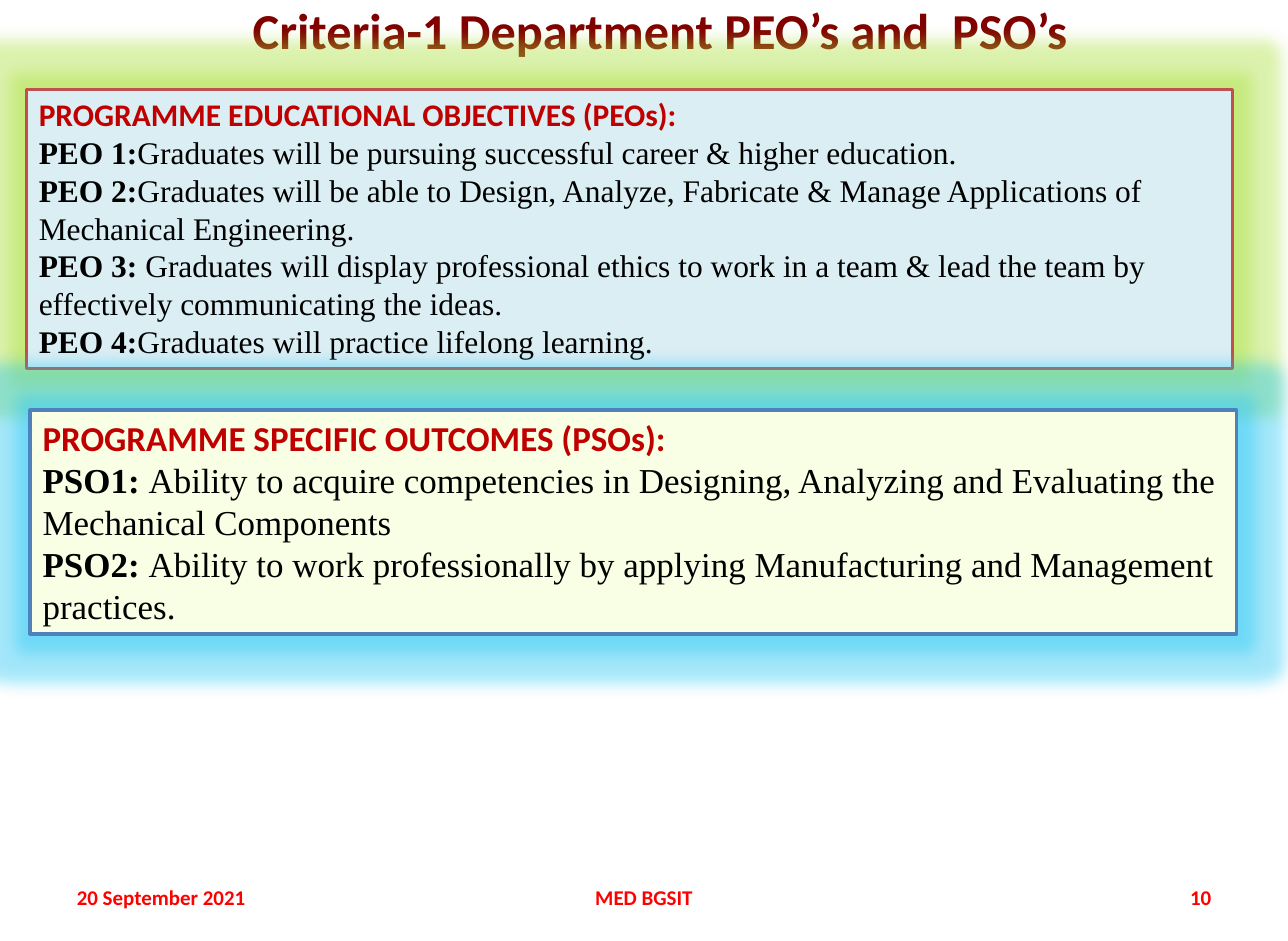
from lxml.etree import SubElement
from pptx import Presentation
from pptx.dml.color import RGBColor
from pptx.enum.shapes import MSO_SHAPE as Shape
from pptx.enum.text import MSO_ANCHOR as Anchor, MSO_AUTO_SIZE as AutoSize, PP_ALIGN as Align
from pptx.oxml.ns import qn
from pptx.util import Inches, Pt

WIDTH, HEIGHT = 10.24, 7.48
TITLE = "Criteria-1 Department PEO’s and  PSO’s"
PANELS = [
    dict(area=(0.21, 0.71, 9.59, 2.22), size=18, fill="DBEEF4", line="C0504D", glow="A7DF34",
         heading="PROGRAMME EDUCATIONAL OBJECTIVES (PEOs):",
         items=[
             ("PEO 1:", "Graduates will be pursuing successful career & higher education."),
             ("PEO 2:", "Graduates will be able to Design, Analyze, Fabricate & Manage "
                        "Applications of Mechanical Engineering."),
             ("PEO 3: ", "Graduates will display professional ethics to work in a team & "
                         "lead the team by effectively communicating the ideas."),
             ("PEO 4:", "Graduates will practice lifelong learning."),
         ]),
    dict(area=(0.24, 3.26, 9.59, 1.78), size=20, fill="F8FFE5", line="4F81BD", glow="1DC5F4",
         heading="PROGRAMME SPECIFIC OUTCOMES (PSOs):",
         items=[
             ("PSO1: ", "Ability to acquire competencies in Designing, Analyzing and "
                        "Evaluating the Mechanical Components"),
             ("PSO2: ", "Ability to work professionally by applying Manufacturing and "
                        "Management practices."),
         ]),
]
SIDE_WIDTH, CENTRE_WIDTH = 2.39, 3.24
MARGIN = WIDTH / 20
FOOTERS = [
    ("20 September 2021", MARGIN, SIDE_WIDTH, Align.LEFT),
    ("MED BGSIT", (WIDTH - CENTRE_WIDTH) / 2, CENTRE_WIDTH, Align.CENTER),
    ("10", WIDTH - MARGIN - SIDE_WIDTH, SIDE_WIDTH, Align.RIGHT),
]


def color(value):
    return RGBColor.from_string(value)


def inches(*lengths):
    return [Inches(length) for length in lengths]


def add_span(para, text, size, font="Calibri", ink="000000", bold=True):
    span = para.add_run()
    span.text = text
    span.font.name, span.font.size, span.font.bold = font, Pt(size), bold
    span.font.color.rgb = color(ink)


def add_glow(box, value, radius=18, opacity=40):
    box.shadow.inherit = False
    effects = box._element.spPr.find(qn("a:effectLst"))
    glow = SubElement(effects, qn("a:glow"), rad=str(Pt(radius)))
    tint = SubElement(glow, qn("a:srgbClr"), val=value)
    SubElement(tint, qn("a:alpha"), val=str(opacity * 1000))


def add_panel(page, area, size, fill, line, glow, heading, items):
    box = page.shapes.add_shape(Shape.RECTANGLE, *inches(*area))
    add_glow(box, glow)
    box.fill.solid()
    box.fill.fore_color.rgb = color(fill)
    box.line.color.rgb = color(line)
    box.line.width = Pt(2)
    frame = box.text_frame
    frame.word_wrap = True
    frame.auto_size = AutoSize.SHAPE_TO_FIT_TEXT
    frame.vertical_anchor = Anchor.TOP
    para = frame.paragraphs[0]
    para.alignment = Align.LEFT
    add_span(para, heading, size, ink="C00000")
    for label, statement in items:
        para = frame.add_paragraph()
        para.alignment = Align.LEFT
        add_span(para, label, size, "Times New Roman")
        add_span(para, statement, size, "Times New Roman", bold=False)


def add_footer(page, text, left, width, alignment):
    box = page.shapes.add_textbox(*inches(left, 6.93, width, 0.4))
    frame = box.text_frame
    frame.word_wrap = True
    frame.vertical_anchor = Anchor.MIDDLE
    para = frame.paragraphs[0]
    para.alignment = alignment
    add_span(para, text, 12, ink="FF0000")


def main():
    deck = Presentation()
    deck.slide_width, deck.slide_height = inches(WIDTH, HEIGHT)
    page = deck.slides.add_slide(deck.slide_layouts[5])
    title = page.shapes.title
    title.left, title.top, title.width, title.height = inches(0.57, 0, 9.36, 0.47)
    frame = title.text_frame
    frame.auto_size = AutoSize.NONE
    frame.vertical_anchor = Anchor.MIDDLE
    frame.paragraphs[0].alignment = Align.CENTER
    add_span(frame.paragraphs[0], TITLE, 28.8, ink="800000")
    for footer in FOOTERS:
        add_footer(page, *footer)
    for panel in PANELS:
        add_panel(page, **panel)
    deck.save("out.pptx")


if __name__ == "__main__":
    main()
